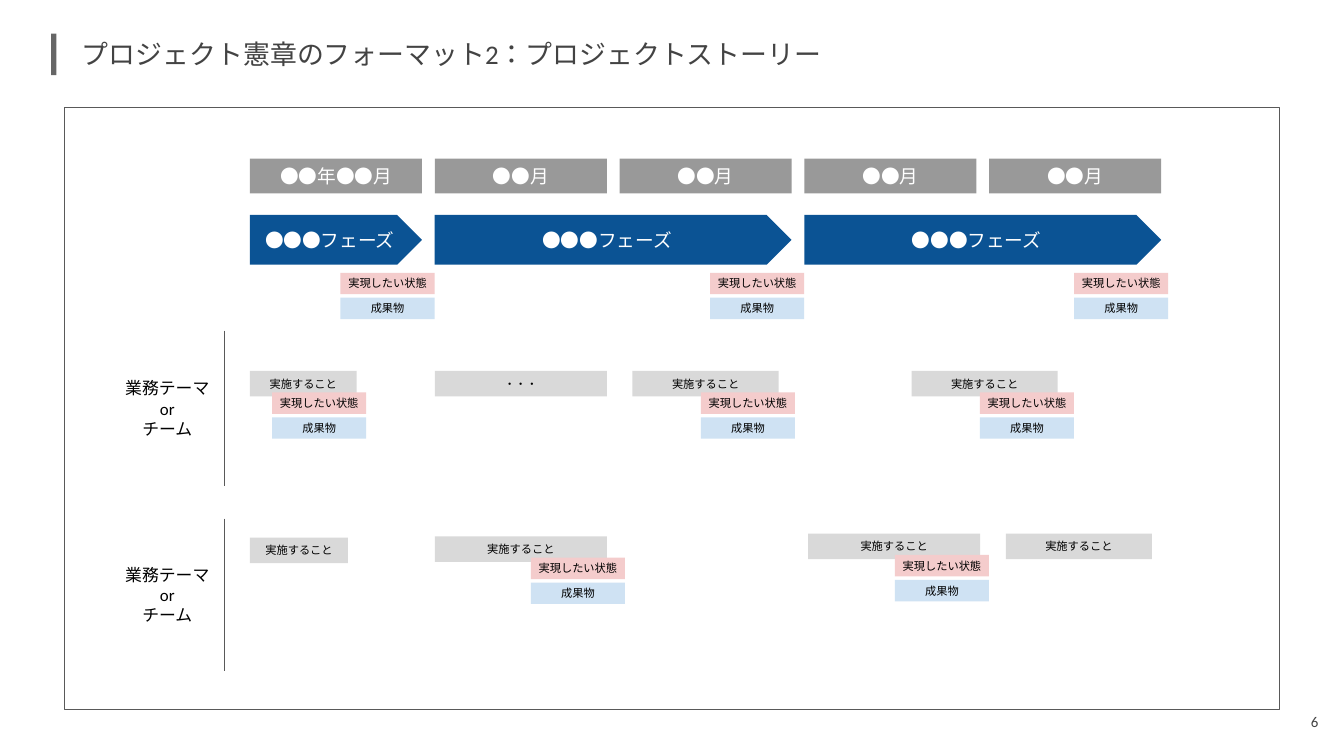
"""Build the project story slide: months, phases and tasks per theme."""
from dataclasses import dataclass
from typing import Optional

from lxml import etree
from pptx import Presentation
from pptx.dml.color import RGBColor
from pptx.enum.lang import MSO_LANGUAGE_ID
from pptx.enum.shapes import MSO_CONNECTOR, MSO_SHAPE
from pptx.enum.text import MSO_ANCHOR, MSO_AUTO_SIZE, PP_ALIGN
from pptx.oxml.ns import qn
from pptx.util import Inches, Pt

RECT, PENTAGON = MSO_SHAPE.RECTANGLE, MSO_SHAPE.PENTAGON
STRAIGHT = MSO_CONNECTOR.STRAIGHT
MIDDLE = MSO_ANCHOR.MIDDLE
LEFT, CENTER, RIGHT = PP_ALIGN.LEFT, PP_ALIGN.CENTER, PP_ALIGN.RIGHT
NO_FIT = MSO_AUTO_SIZE.NONE
JAPANESE = MSO_LANGUAGE_ID.JAPANESE

SLIDE_W = 10
SLIDE_H = SLIDE_W * 9 / 16
FONT = "Calibri"
COLORS = {
    "white": "FFFFFF", "black": "000000", "title": "434343", "accent": "666666",
    "line": "595959", "month": "999999", "phase": "0B5394", "task": "D9D9D9",
    "state": "F4CCCC", "output": "CFE2F3",
}
GRID_LEFT, COL_W = 1.86, 1.28
COL_STEP = 5.5 / 4
LABEL_LEFT, LABEL_W, DIVIDER_X = 0.81, 0.87, 1.67
MONTH_TOP, MONTH_H = 1.18, 0.26
PHASE_TOP, PHASE_H = 1.6, 0.37
TASK_H, TAG_DROP = 0.19, 0.16
TAG_W, TAG_H = 0.7, 0.16
TAG_STEP = 0.37 / 2
TODO = "実施すること"


@dataclass
class Box:
    left: float
    top: float
    width: float
    height: float


@dataclass
class Style:
    size: float
    color: str
    inset: float = 0.1
    align: PP_ALIGN = CENTER


@dataclass
class Phase:
    column: int
    span: int
    tag_column: float


@dataclass
class Task:
    column: float
    width: float
    drop: float
    tag_column: Optional[float] = None
    text: str = TODO


@dataclass
class Theme:
    top: float
    height: float
    tasks: list[Task]


BAR_TEXT = Style(10, "white")
LABEL_TEXT = Style(9, "black", 0.06)
TASK_TEXT = Style(6, "black")
TAG_TEXT = Style(6, "black", 0.02)

MONTHS = ["●●年●●月"] + ["●●月"] * 4
PHASES = [Phase(0, 1, 0.49), Phase(1, 2, 2.49), Phase(3, 2, 4.46)]
THEME_LINES = ["業務テーマ", "or", "チーム"]
THEMES = [
    Theme(2.46, 1.16, [
        Task(0, 0.62, 0.3, 0.12),
        Task(1, 1, 0.3, text="・・・"),
        Task(2.07, 0.85, 0.3, 2.44),
        Task(3.58, 0.85, 0.3, 3.95),
    ]),
    Theme(3.86, 1.13, [
        Task(0, 0.57, 0.14),
        Task(1, 1, 0.13, 1.52),
        Task(3.02, 1, 0.11, 3.49),
        Task(4.09, 0.85, 0.11),
    ]),
]


def rgb(name: str) -> RGBColor:
    return RGBColor.from_string(COLORS[name])


def column_x(column: float) -> float:
    return GRID_LEFT + column * COL_STEP


def emu(box: Box) -> list[int]:
    return [Inches(v) for v in (box.left, box.top, box.width, box.height)]


def write(tf, lines: list[str], style: Style) -> None:
    tf.word_wrap = True
    tf.auto_size = NO_FIT
    tf.vertical_anchor = MIDDLE
    tf.margin_left = tf.margin_right = Inches(style.inset)
    tf.margin_top = tf.margin_bottom = Inches(style.inset)
    for i, line in enumerate(lines):
        p = tf.paragraphs[0] if i == 0 else tf.add_paragraph()
        p.alignment = style.align
        r = p.add_run()
        r.text = line
        r.font.name = FONT
        r.font.size = Pt(style.size)
        r.font.color.rgb = rgb(style.color)
        r.font.language_id = JAPANESE


def add_box(s, box: Box, fill: Optional[str] = None, lines: Optional[list[str]] = None,
            style: Style = TASK_TEXT, line: Optional[str] = None, kind: MSO_SHAPE = RECT) -> None:
    sp = s.shapes.add_shape(kind, *emu(box))
    sp.shadow.inherit = False
    if fill:
        sp.fill.solid()
        sp.fill.fore_color.rgb = rgb(fill)
    else:
        sp.fill.background()
    if line:
        sp.line.color.rgb = rgb(line)
        sp.line.width = Pt(0.75)
    else:
        sp.line.fill.background()
    if lines:
        write(sp.text_frame, lines, style)


def add_divider(s, top: float, height: float) -> None:
    x = Inches(DIVIDER_X)
    cxn = s.shapes.add_connector(STRAIGHT, x, Inches(top), x, Inches(top + height))
    cxn.line.color.rgb = rgb("line")
    cxn.line.width = Pt(0.75)
    etree.SubElement(cxn._element.spPr, qn("a:effectLst"))


def add_tags(s, column: float, top: float) -> None:
    for i, (fill, text) in enumerate([("state", "実現したい状態"), ("output", "成果物")]):
        box = Box(column_x(column), top + i * TAG_STEP, TAG_W, TAG_H)
        add_box(s, box, fill, [text], TAG_TEXT)


def add_theme(s, theme: Theme) -> None:
    label = Box(LABEL_LEFT, theme.top, LABEL_W, theme.height)
    add_box(s, label, "white", THEME_LINES, LABEL_TEXT, "white")
    add_divider(s, theme.top, theme.height)
    for task in theme.tasks:
        top = theme.top + task.drop
        box = Box(column_x(task.column), top, task.width * COL_W, TASK_H)
        add_box(s, box, "task", [task.text])
        if task.tag_column is not None:
            add_tags(s, task.tag_column, top + TAG_DROP)


def main() -> None:
    prs = Presentation()
    prs.slide_width, prs.slide_height = Inches(SLIDE_W), Inches(SLIDE_H)
    s = prs.slides.add_slide(prs.slide_layouts[5])

    add_box(s, Box(0.38, 0.25, 0.04, 0.31), "accent")
    title = s.shapes.title
    title.left, title.top, title.width, title.height = emu(Box(0.51, 0.17, 9.3, 0.46))
    write(title.text_frame, ["プロジェクト憲章のフォーマット2：プロジェクトストーリー"],
          Style(14.4, "title", align=LEFT))
    number = s.shapes.add_textbox(*emu(Box(9.35, 5.2, 0.56, 0.34)))
    write(number.text_frame, ["6"], Style(8, "title", align=RIGHT))

    for i, month in enumerate(MONTHS):
        add_box(s, Box(column_x(i), MONTH_TOP, COL_W, MONTH_H), "month", [month], BAR_TEXT)
    for phase in PHASES:
        width = (phase.span - 1) * COL_STEP + COL_W
        add_box(s, Box(column_x(phase.column), PHASE_TOP, width, PHASE_H), "phase",
                ["●●●フェーズ"], BAR_TEXT, kind=PENTAGON)
        add_tags(s, phase.tag_column, 2.03)
    for theme in THEMES:
        add_theme(s, theme)
    add_box(s, Box(0.48, 0.8, 9.04, 4.48), line="line")
    prs.save("out.pptx")


if __name__ == "__main__":
    main()
